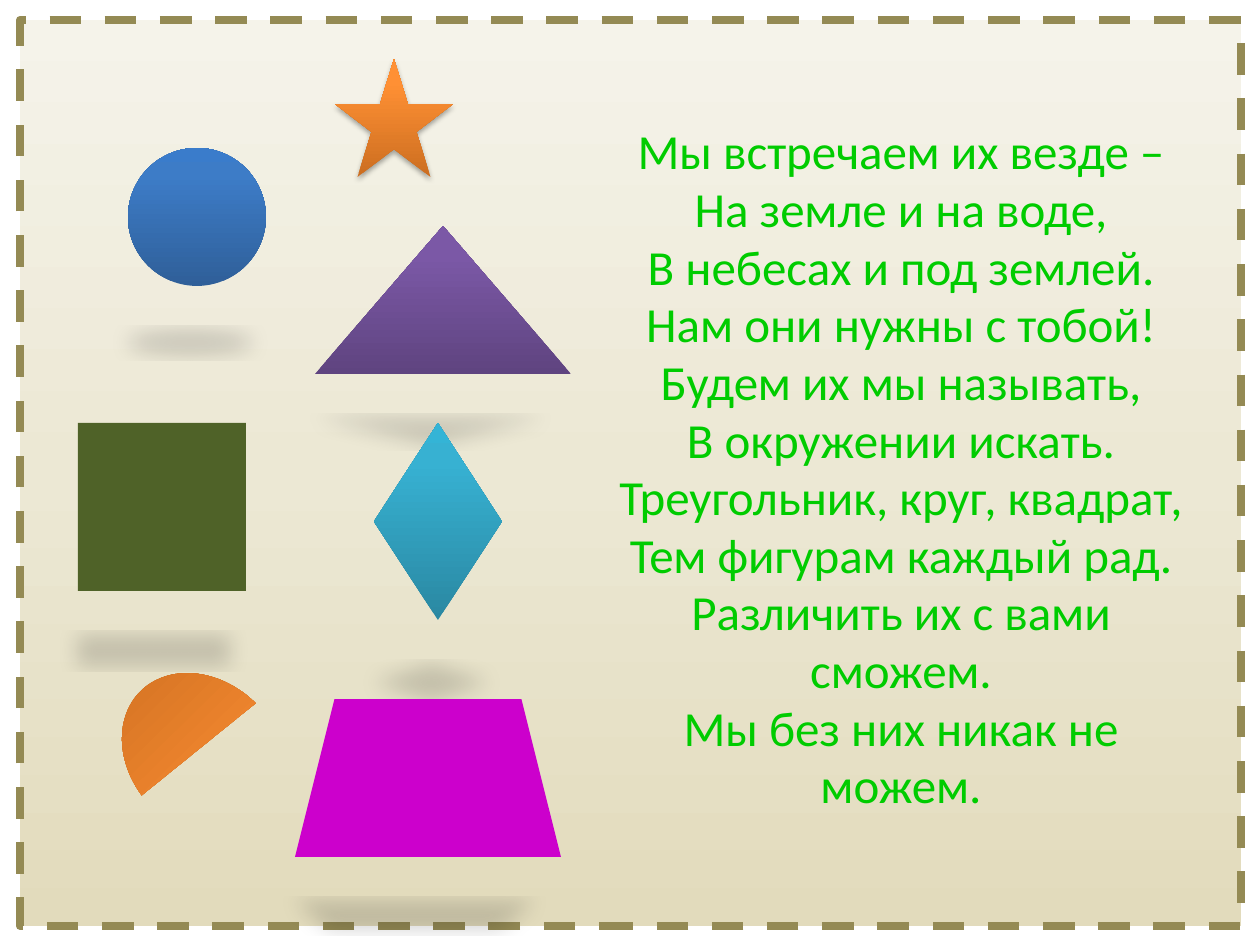
from copy import deepcopy
from lxml import etree
from pptx import Presentation
from pptx import util as u
from pptx.dml.color import RGBColor
from pptx.enum import dml, shapes, text
from pptx.oxml.ns import qn

PX = 914400 // 126
KIND = shapes.MSO_SHAPE
ORANGE = ["CC6E20", "FF9034", "FF9136"]
CAST = dict(blurRad=152400, dist=317500, dir=5400000, sx=90000, sy=-19000,
            algn="bl", rotWithShape=0)
DROP = dict(blurRad=40000, dist=23000, dir=5400000, rotWithShape=0)
POEM = """Мы встречаем их везде –
На земле и на воде,
В небесах и под землей.
Нам они нужны с тобой!
Будем их мы называть,
В окружении искать.
Треугольник, круг, квадрат,
Тем фигурам каждый рад.
Различить их с вами сможем.
Мы без них никак не можем."""


def px(*vals):
    """Turn pixel lengths into EMU."""
    return [u.Emu(v * PX) for v in vals]


def tint(code):
    """Turn a hex string into a colour."""
    return RGBColor.from_string(code)


def blend(shape, tones, mid):
    """Fill a shape with three tones rising from its foot."""
    fill = shape.fill
    fill.gradient()
    fill.gradient_angle = 90
    stops = shape._element.spPr.find(qn("a:gradFill")).find(qn("a:gsLst"))
    stops.append(deepcopy(stops[-1]))
    for stop, tone, spot in zip(fill.gradient_stops, tones, (0, mid, 1)):
        stop.color.rgb = tint(tone)
        stop.position = spot


def shade(shape, form, alpha):
    """Cast a black shadow of the given form."""
    room = shape._element.spPr.find(qn("a:effectLst"))
    outer = etree.SubElement(room, qn("a:outerShdw"),
                             {k: str(v) for k, v in form.items()})
    tone = etree.SubElement(outer, qn("a:srgbClr"), val="000000")
    etree.SubElement(tone, qn("a:alpha"), val=str(alpha * 1000))


def draw(slide, kind, box, fill, mid=0.8):
    """Add a plain or blended shape with no outline."""
    shape = slide.shapes.add_shape(kind, *px(*box))
    shape.shadow.inherit = False
    shape.line.fill.background()
    if isinstance(fill, str):
        shape.fill.solid()
        shape.fill.fore_color.rgb = tint(fill)
    else:
        blend(shape, fill, mid)
    return shape


def write(slide, words, box, size=28, color="00CC00", font="Calibri",
          lead=0.985, foot=64):
    """Add centred lines of text."""
    frame = slide.shapes.add_textbox(*px(*box)).text_frame
    frame.word_wrap = True
    frame.vertical_anchor = text.MSO_ANCHOR.MIDDLE
    frame.margin_top, frame.margin_bottom = px(0, foot)
    frame.text = words
    for par in frame.paragraphs:
        par.alignment = text.PP_ALIGN.CENTER
        par.line_spacing = lead
        par.font.size = u.Pt(size)
        par.font.name = font
        par.font.color.rgb = tint(color)


def border(slide, box):
    """Draw the dashed backdrop."""
    panel = draw(slide, KIND.RECTANGLE, box,
                 ["E2DBBC", "ECE8D4", "F5F3EA"], 0.5)
    panel.line.color.rgb = tint("948A54")
    panel.line.width = u.Pt(4.5)
    panel.line.dash_style = dml.MSO_LINE.DASH


def figures(slide, box):
    """Place the geometric figures inside the box."""
    left, top = box[:2]
    items = [
        (KIND.OVAL, (50, 89, 138, 138), ["2F5F99", "3D7CC7", "3A7CCB"]),
        (KIND.ISOSCELES_TRIANGLE, (237, 167, 256, 148),
         ["5F4480", "7B58A6", "7C57A8"]),
        (KIND.RECTANGLE, (0, 364, 168, 168), "4F6228"),
        (KIND.DIAMOND, (296, 364, 128, 197), ["2A88A2", "37B1D2", "34B4D6"]),
        (KIND.CHORD, (53, 606, 147, 182), ORANGE),
        (KIND.TRAPEZOID, (217, 640, 266, 158), "CC00CC"),
        (KIND.STAR_5_POINT, (257, 0, 118, 118), ORANGE),
    ]
    for kind, (x, y, wide, high), fill in items:
        shape = draw(slide, kind, (left + x, top + y, wide, high), fill)
        if kind == KIND.STAR_5_POINT:
            shade(shape, DROP, 35)
        else:
            shade(shape, CAST, 15)
        if kind == KIND.CHORD:
            shape.rotation = 135.6
            shape.adjustments[0] = 7.407
            shape.adjustments[1] = 107.08


def main():
    """Build and save the slide."""
    deck = Presentation()
    deck.slide_width, deck.slide_height = px(1260, 945)
    slide = deck.slides.add_slide(deck.slide_layouts[6])
    border(slide, (20, 20, 1221, 906))
    figures(slide, (78, 59, 493, 798))
    write(slide, POEM, (591, 118, 620, 767))
    deck.save("out.pptx")


if __name__ == "__main__":
    main()
